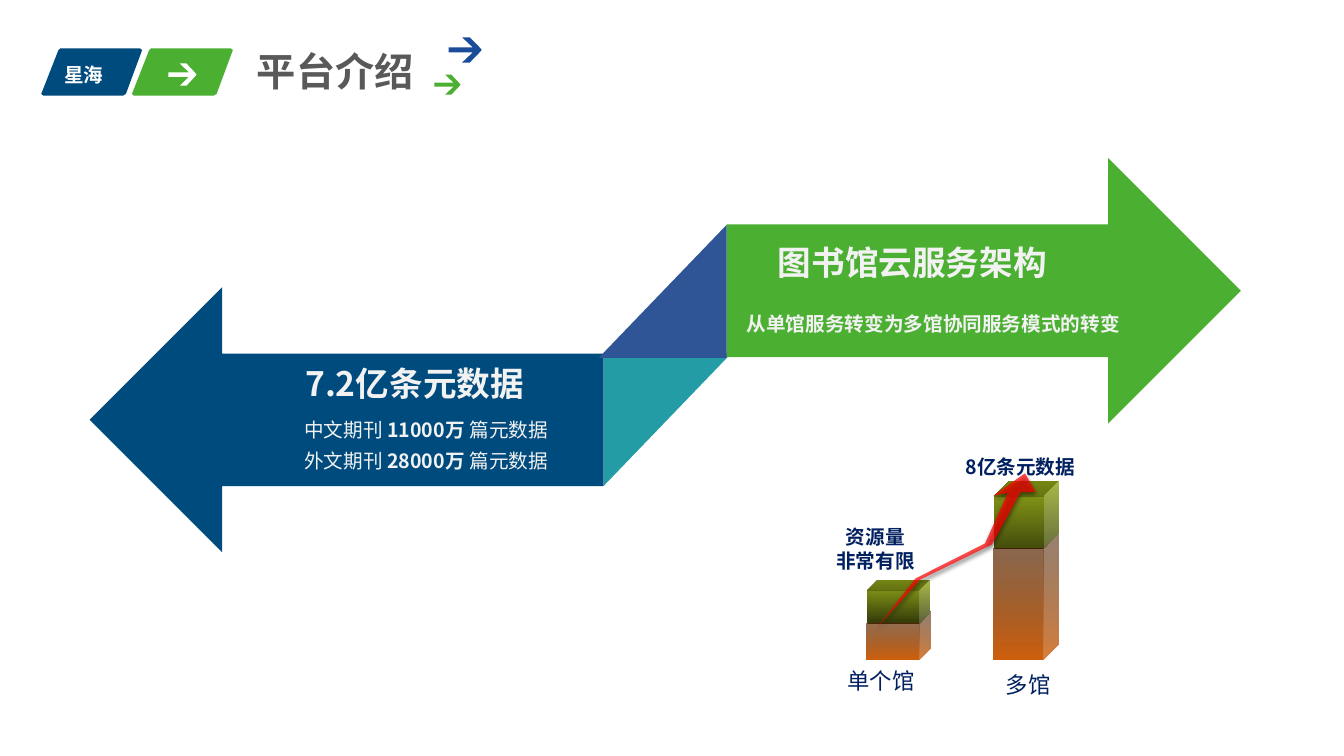
from dataclasses import dataclass, field
from typing import NamedTuple

from lxml import etree
from pptx import Presentation, util as u
from pptx.dml.color import RGBColor
from pptx.enum import shapes as es, text as et
from pptx.oxml.ns import qn

WIDE, HIGH = u.Emu(12192000), u.Emu(6858000)
COLS, ROWS = 80, 45  # square cells
FACE = "Noto Sans CJK SC"
HUES = {
    "navy": "004B7D", "green": "4BAF32", "teal": "239CA5", "blue": "2F5597",
    "royal": "1B4C98", "white": "FFFFFF", "pale": "F2F2F2", "gray": "595959",
    "ink": "002060", "red": "FF0000", "black": "000000", "rust": "CE5F0C",
    "brown": "482104", "moss": "444D0C", "pine": "333A09", "lime": "93A719",
}
ARROW = [(1, .5), (.9, .65), (.64, 1), (.41, 1), (.73, .6), (0, .6),
         (0, .4), (.73, .4), (.41, 0), (.64, 0), (.9, .35)]
TAB = [(.19, 0), (.98, 0), (1, .04), (.84, .96), (.81, 1), (.02, 1),
       (0, .96), (.17, .04)]
TREND = [(.93, .2), (.69, .66), (.29, .68), (0, 1), (.27, .64), (.66, .61),
         (.87, .14), (.8, .09), (.99, 0), (1, .28)]


class Box(NamedTuple):
    """Place and size in grid columns and rows."""
    col: float
    row: float
    wide: float
    high: float

    def emu(self) -> list[int]:
        cell = (WIDE / COLS, HIGH / ROWS) * 2
        return [round(n * c) for n, c in zip(self, cell)]


class Solid(NamedTuple):
    kind: es.MSO_SHAPE
    box: Box
    hue: str
    flip: str = ""


class Cube(NamedTuple):
    box: Box
    low: str
    top: str
    alpha: int = 100


class Path(NamedTuple):
    pts: list
    box: Box
    hue: str


@dataclass
class Label:
    """Lines are lists of (text, bold) runs."""
    box: Box
    lines: list
    size: int
    hue: str
    frame: dict = field(default_factory=dict)
    para: dict = field(default_factory=dict)


KIND = es.MSO_SHAPE
RIBBON = [
    Solid(KIND.RIGHT_ARROW, Box(5.34, 17.1, 30.6, 15.78), "navy", "flipH"),
    Solid(KIND.RIGHT_TRIANGLE, Box(35.94, 21, 7.62, 7.92), "teal", "flipV"),
    Solid(KIND.RIGHT_ARROW, Box(43.26, 9.42, 30.6, 15.78), "green"),
    Solid(KIND.RIGHT_TRIANGLE, Box(35.64, 13.38, 7.62, 7.92), "blue", "flipH"),
]
HEAD = [
    Path(TAB, Box(7.86, 2.88, 6, 2.82), "green"),
    Path(TAB, Box(2.46, 2.88, 6, 2.82), "navy"),
    Path(ARROW, Box(10.02, 3.78, 1.68, 1.32), "white"),
    Path(ARROW, Box(25.86, 4.44, 1.56, 1.2), "green"),
    Path(ARROW, Box(26.7, 2.22, 1.98, 1.5), "royal"),
]
CUBES = [
    Cube(Box(57.3, 33.54, 7.56, 3.9), "rust", "brown", 70),
    Cube(Box(59.1, 28.68, 4.02, 3.9), "moss", "lime"),
    Cube(Box(52.08, 35.94, 2.82, 3.78), "rust", "brown", 70),
    Cube(Box(52.2, 33.96, 2.58, 3.72), "pine", "lime"),
]
RISE = Path(TREND, Box(50.76, 30.42, 11.88, 4.56), "red")

MID = {"vertical_anchor": et.MSO_ANCHOR.MIDDLE}
FREE = {"word_wrap": False}
EVEN = {"alignment": et.PP_ALIGN.JUSTIFY}
MEAN = {"alignment": et.PP_ALIGN.CENTER}
LOOSE = {"line_spacing": 1.3}
LABELS = [
    Label(Box(17.52, 24.18, 16.26, 4.14),
          [[(f"{kind}期刊 ", False), (f"{count}万 ", True), ("篇元数据", False)]
           for kind, count in (("中文", 11000), ("外文", 28000))],
          14, "pale", para=EVEN | LOOSE),
    Label(Box(17.58, 21.3, 16.26, 3), [[("7.2亿条元数据", True)]],
          24, "pale", para=EVEN),
    Label(Box(43.86, 17.88, 24.12, 2.28),
          [[("从单馆服务转变为多馆协同服务模式的转变", True)]],
          14, "pale", para=LOOSE),
    Label(Box(45.72, 14.1, 18.78, 3), [[("图书馆云服务架构", True)]],
          24, "pale", para=EVEN),
    Label(Box(14.7, 2.52, 11.1, 3.42), [[("平台介绍", True)]],
          28, "gray", MID),
    Label(Box(3.24, 3.42, 5.76, 2.04), [[("星海", True)]], 14, "white", MID),
    Label(Box(49.86, 39.42, 6, 2.52), [[("单个馆", False)]], 16, "ink", FREE),
    Label(Box(49.14, 30.96, 5.94, 3.42),
          [[("资源量", True)], [("非常有限", True)]], 14, "ink", FREE, MEAN),
    Label(Box(59.28, 39.66, 3.9, 2.22), [[("多馆", False)]], 16, "ink", FREE),
    Label(Box(56.88, 26.76, 8.88, 2.28), [[("8亿条元数据", True)]],
          14, "ink", FREE),
]


def rgb(hue: str) -> RGBColor:
    return RGBColor.from_string(HUES[hue])


def apply(item, values: dict) -> None:
    for name, value in values.items():
        setattr(item, name, value)


def fade(node, share: int) -> None:
    """Set the opacity, in percent, of the colour inside node."""
    hue = next(node.iter(qn("a:srgbClr")))
    etree.SubElement(hue, qn("a:alpha"), val=str(share * 1000))


def plain(shape) -> None:
    shape.shadow.inherit = False
    shape.line.fill.background()


def paint(shape, hue: str) -> None:
    plain(shape)
    shape.fill.solid()
    shape.fill.fore_color.rgb = rgb(hue)


def turn(shape, flip: str) -> None:
    if flip:
        shape._element.spPr.xfrm.set(flip, "1")


def add_solid(slide, item: Solid) -> None:
    shape = slide.shapes.add_shape(item.kind, *item.box.emu())
    paint(shape, item.hue)
    turn(shape, item.flip)


def add_path(slide, item: Path):
    left, top, wide, high = item.box.emu()
    pts = [(round(left + x * wide), round(top + y * high)) for x, y in item.pts]
    pen = slide.shapes.build_freeform(*pts[0], scale=1.0)
    pen.add_line_segments(pts[1:], close=True)
    shape = pen.convert_to_shape()
    paint(shape, item.hue)
    return shape


def add_cube(slide, item: Cube) -> None:
    shape = slide.shapes.add_shape(KIND.CUBE, *item.box.emu())
    plain(shape)
    shape.adjustments[0] = .24
    shape.rotation = 270
    turn(shape, "flipV")
    shape.fill.gradient()
    shape.fill.gradient_angle = 0
    ends = shape.fill.gradient_stops
    for stop, spot, hue in zip(ends, (0, 1), (item.low, item.top)):
        stop.position = spot
        stop.color.rgb = rgb(hue)
    if item.alpha < 100:
        fade(ends[1]._gs, item.alpha)


def add_rise(slide) -> None:
    shape = add_path(slide, RISE)
    shape.rotation = -25
    props = shape._element.spPr
    fade(props.find(qn("a:solidFill")), 70)
    cast = etree.SubElement(
        props.find(qn("a:effectLst")), qn("a:outerShdw"), dir="5400000",
        blurRad=str(u.Pt(3.5)), dist=str(u.Pt(2.2)), rotWithShape="0")
    etree.SubElement(cast, qn("a:srgbClr"), val=HUES["black"])
    fade(cast, 68)


def add_label(slide, item: Label) -> None:
    frame = slide.shapes.add_textbox(*item.box.emu()).text_frame
    fit = et.MSO_AUTO_SIZE.SHAPE_TO_FIT_TEXT
    apply(frame, {"word_wrap": True, "auto_size": fit} | item.frame)
    for i, line in enumerate(item.lines):
        para = frame.add_paragraph() if i else frame.paragraphs[0]
        apply(para, item.para)
        for words, bold in line:
            run = para.add_run()
            run.text = words
            apply(run.font, {"size": u.Pt(item.size), "bold": bold, "name": FACE})
            run.font.color.rgb = rgb(item.hue)
            etree.SubElement(run.font._element, qn("a:ea"), typeface=FACE)


def main() -> None:
    deck = Presentation()
    apply(deck, {"slide_width": WIDE, "slide_height": HIGH})
    slide = deck.slides.add_slide(deck.slide_layouts[6])
    for draw, items in ((add_solid, RIBBON), (add_path, HEAD), (add_cube, CUBES)):
        for item in items:
            draw(slide, item)
    add_rise(slide)
    for item in LABELS:
        add_label(slide, item)
    deck.save("out.pptx")


if __name__ == "__main__":
    main()
